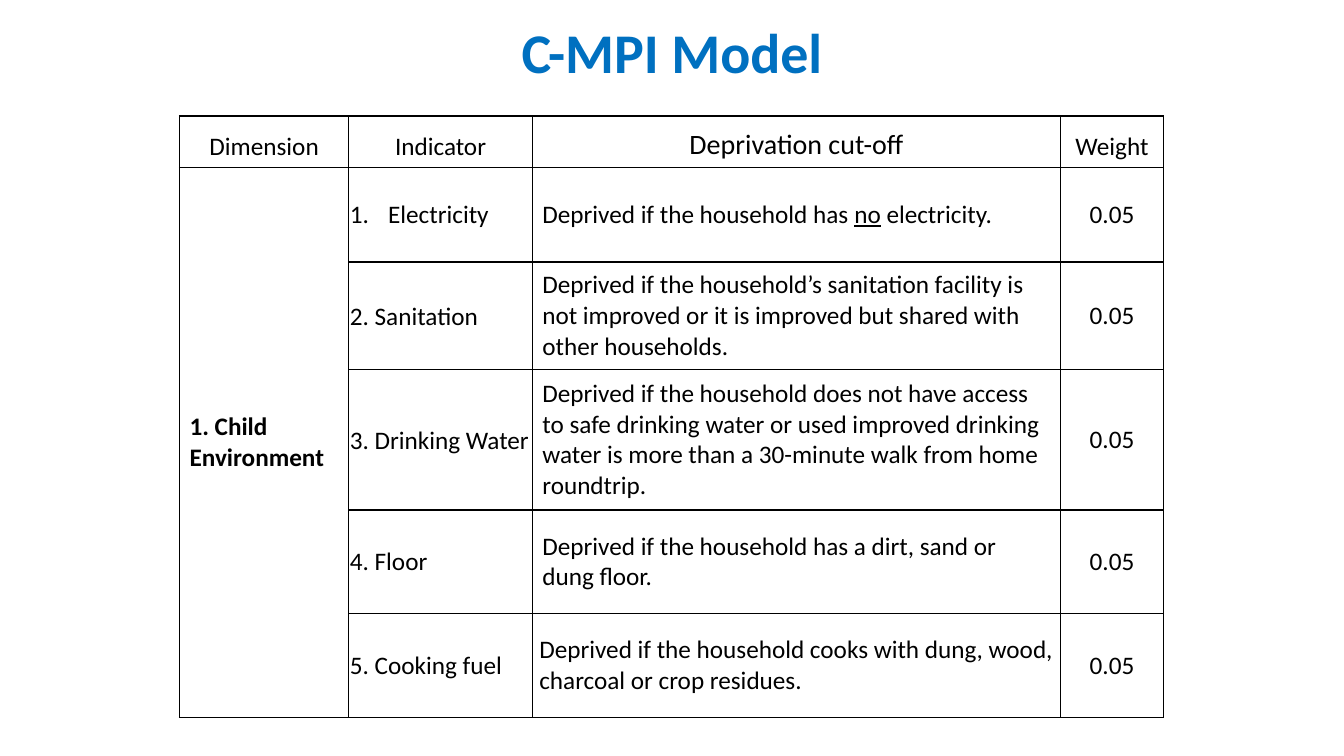
from dataclasses import dataclass

from lxml.etree import SubElement as Sub
from pptx import Presentation
from pptx.dml.color import RGBColor as Rgb
from pptx.enum.text import MSO_ANCHOR as Anchor, PP_ALIGN as Align
from pptx.oxml.ns import qn
from pptx.table import _Cell as Cell
from pptx.text.text import TextFrame as Frame
from pptx.util import Pt

PX = 9144  # 100 px to the inch
FONT = "Calibri"
HEX = {"title": "0070C0", "text": "000000", "line": "000000", "fill": "FFFFFF"}
COLS = [168, 182, 524, 102]
ROWS = [51, 94, 107, 139, 103, 103]
HEADS = ["Dimension", "Indicator", "Deprivation cut-off", "Weight"]
TIGHT = (1, 1, 1, 0)
PLAIN = (10, 5, 10, 5)


@dataclass
class Item:
    name: str
    rule: str
    pad: tuple[int, int, int, int] = PLAIN
    number: bool = False
    weight: str = "0.05"


ITEMS = [
    Item("Electricity", "Deprived if the household has _no_ electricity.", number=True),
    Item("2. Sanitation", "Deprived if the household’s sanitation facility is not "
         "improved or it is improved but shared with other households."),
    Item("3. Drinking Water", "Deprived if the household does not have access to safe "
         "drinking water or used improved drinking water is more than a 30-minute "
         "walk from home roundtrip."),
    Item("4. Floor", "Deprived if the household has a dirt, sand or dung floor."),
    Item("5. Cooking fuel", "Deprived if the household cooks with dung, wood, "
         "charcoal or crop residues.", pad=(7, 0, 7, 0)),
]


def px(n: int) -> int:
    return n * PX


def write(frame: Frame, text: str, *, size: int = 18, color: str = "text",
          bold: bool = False, align: Align = Align.LEFT) -> None:
    """Fill the frame with one paragraph; words between underscores are underlined."""
    para = frame.paragraphs[0]
    para.alignment = align
    for i, part in enumerate(text.split("_")):
        run = para.add_run()
        run.text = part
        font = run.font
        font.name, font.size, font.bold = FONT, Pt(size), bold
        font.underline = i % 2 == 1
        font.color.rgb = Rgb.from_string(HEX[color])


def edge(cell: Cell) -> None:
    """Draw a thin line on all four sides."""
    props = cell._tc.get_or_add_tcPr()
    for side in ("lnL", "lnR", "lnT", "lnB"):
        line = Sub(props, qn(f"a:{side}"), w=str(Pt(1)))
        fill = Sub(line, qn("a:solidFill"))
        Sub(fill, qn("a:srgbClr"), val=HEX["line"])


def count(cell: Cell) -> None:
    """Number the paragraph automatically, with a hanging indent."""
    props = cell.text_frame.paragraphs[0]._p.get_or_add_pPr()
    props.set("marL", str(px(38)))
    props.set("indent", str(px(-38)))
    Sub(props, qn("a:buFont"), typeface="+mj-lt")
    Sub(props, qn("a:buAutoNum"), type="arabicPeriod")


def put(cell: Cell, text: str, *, pad: tuple[int, int, int, int] = PLAIN,
        anchor: Anchor = Anchor.MIDDLE, size: int = 18, bold: bool = False,
        align: Align = Align.LEFT) -> None:
    cell.margin_left, cell.margin_top, cell.margin_right, cell.margin_bottom = map(px, pad)
    cell.vertical_anchor = anchor
    write(cell.text_frame, text, size=size, bold=bold, align=align)


def main() -> None:
    deck = Presentation()
    deck.slide_width, deck.slide_height = px(1333), px(750)
    slide = deck.slides.add_slide(deck.slide_layouts[5])

    title = slide.shapes.title
    title.left, title.top, title.width, title.height = map(px, (194, 17, 945, 73))
    title.text_frame.vertical_anchor = Anchor.BOTTOM
    write(title.text_frame, "C-MPI Model", size=40, color="title", bold=True,
          align=Align.CENTER)
    title.text_frame.paragraphs[0].line_spacing = 0.9

    table = slide.shapes.add_table(len(ROWS), len(COLS), px(178), px(115),
                                   px(sum(COLS)), px(sum(ROWS))).table
    table.first_row = table.horz_banding = False
    for col, width in zip(table.columns, COLS):
        col.width = px(width)
    for row, height in zip(table.rows, ROWS):
        row.height = px(height)
    for cell in table.iter_cells():
        edge(cell)
        cell.fill.solid()
        cell.fill.fore_color.rgb = Rgb.from_string(HEX["fill"])

    for c, head in enumerate(HEADS):
        put(table.cell(0, c), head, anchor=Anchor.BOTTOM, size=20 if c == 2 else 18,
            align=Align.CENTER)

    group = table.cell(1, 0)
    group.merge(table.cell(len(ITEMS), 0))
    put(group, "1. Child Environment", bold=True)
    for r, item in enumerate(ITEMS, 1):
        put(table.cell(r, 1), item.name, pad=TIGHT)
        if item.number:
            count(table.cell(r, 1))
        put(table.cell(r, 2), item.rule, pad=item.pad)
        put(table.cell(r, 3), item.weight, align=Align.CENTER)

    deck.save("out.pptx")


if __name__ == "__main__":
    main()
